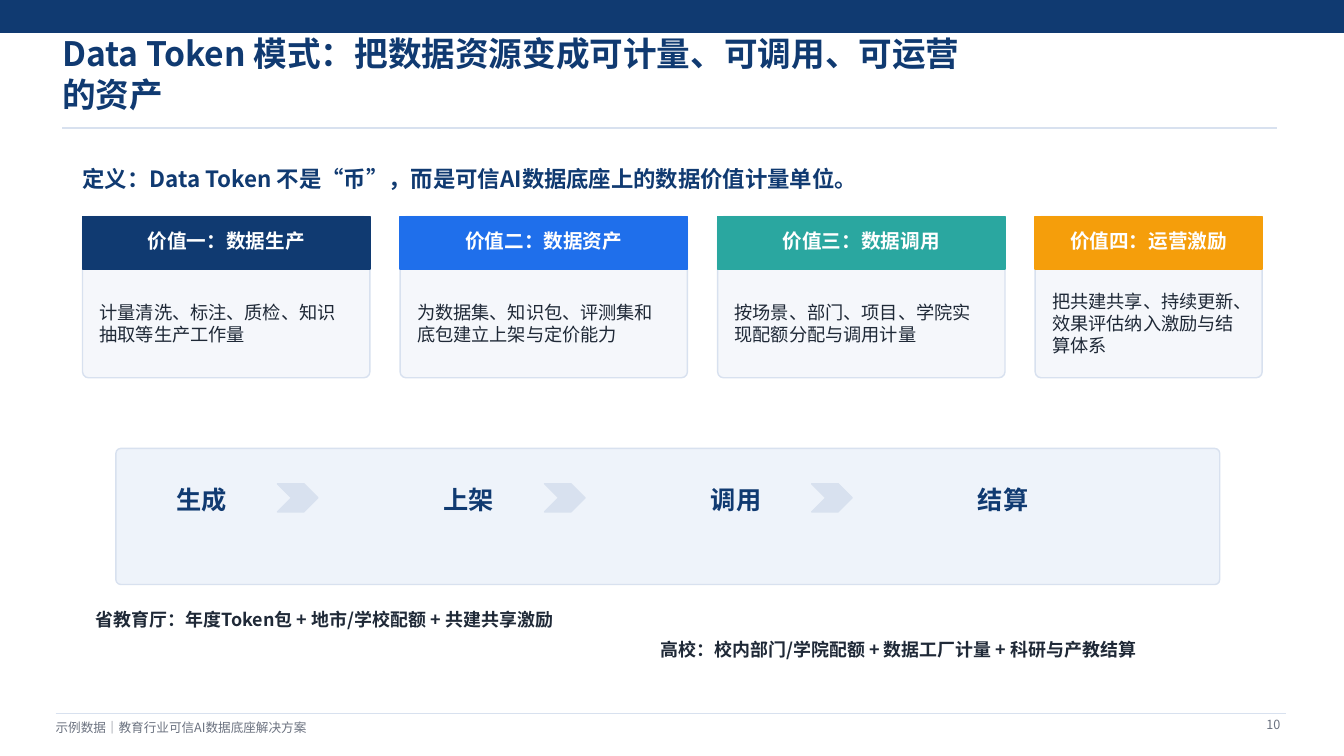
import lxml.etree
import pptx
import pptx.dml.color
import pptx.enum.shapes
import pptx.enum.text
import pptx.oxml.ns
import pptx.util

Cm = pptx.util.Cm
Pt = pptx.util.Pt
RGBColor = pptx.dml.color.RGBColor
SHAPE = pptx.enum.shapes.MSO_SHAPE
ALIGN = pptx.enum.text.PP_ALIGN
qn = pptx.oxml.ns.qn

FONT = "Noto Sans CJK SC"
NAVY = RGBColor(0x10, 0x3A, 0x71)
BLUE = RGBColor(0x1F, 0x6F, 0xEB)
TEAL = RGBColor(0x2A, 0xA7, 0xA0)
ORANGE = RGBColor(0xF5, 0x9E, 0x0B)
WHITE = RGBColor(0xFF, 0xFF, 0xFF)
INK = RGBColor(0x1F, 0x29, 0x37)
GRAY = RGBColor(0x6B, 0x72, 0x80)
RULE = RGBColor(0xD8, 0xE1, 0xEF)
CARD_FILL = RGBColor(0xF5, 0xF7, 0xFB)
FLOW_FILL = RGBColor(0xEE, 0xF3, 0xFA)

SLIDE_WIDTH, SLIDE_HEIGHT = 33.86, 19.05
CARD_WIDTH, LAST_CARD_WIDTH, CARD_PITCH = 7.24, 5.72, 8
STEP_PITCH = 6.73

CARDS = [
    ("价值一：数据生产", "计量清洗、标注、质检、知识抽取等生产工作量", NAVY),
    ("价值二：数据资产", "为数据集、知识包、评测集和底包建立上架与定价能力", BLUE),
    ("价值三：数据调用", "按场景、部门、项目、学院实现配额分配与调用计量", TEAL),
    ("价值四：运营激励", "把共建共享、持续更新、效果评估纳入激励与结算体系", ORANGE),
]
STEPS = ["生成", "上架", "调用", "结算"]


def write_text(shape, text, size, color, bold=False, align=ALIGN.LEFT):
    frame = shape.text_frame
    frame.word_wrap = True
    frame.auto_size = pptx.enum.text.MSO_AUTO_SIZE.NONE
    frame.vertical_anchor = pptx.enum.text.MSO_ANCHOR.MIDDLE
    frame.margin_left = frame.margin_right = 0
    frame.margin_top = frame.margin_bottom = 0
    frame.text = text
    paragraph = frame.paragraphs[0]
    paragraph.alignment = align
    font = paragraph.font
    font.name = FONT
    font.size = Pt(size)
    font.bold = bold
    font.color.rgb = color
    properties = paragraph._p.pPr.find(qn("a:defRPr"))
    lxml.etree.SubElement(properties, qn("a:ea")).set("typeface", FONT)


def add_text(slide, box, text, size, color, bold=False, align=ALIGN.LEFT):
    shape = slide.shapes.add_textbox(*map(Cm, box))
    write_text(shape, text, size, color, bold, align)


def add_block(slide, kind, box, fill, line):
    shape = slide.shapes.add_shape(kind, *map(Cm, box))
    shape.shadow.inherit = False
    shape.fill.solid()
    shape.fill.fore_color.rgb = fill
    shape.line.color.rgb = line
    shape.line.width = Pt(1)
    if kind == SHAPE.ROUNDED_RECTANGLE:
        shape.adjustments[0] = 0.037


def add_rule(slide, left, right, top):
    connector = slide.shapes.add_connector(
        pptx.enum.shapes.MSO_CONNECTOR.STRAIGHT, Cm(left), Cm(top), Cm(right), Cm(top))
    connector.line.color.rgb = RULE
    connector.line.width = Pt(1)
    lxml.etree.SubElement(connector._element.spPr, qn("a:effectLst"))


def add_header(slide, left, top, width, height):
    add_block(slide, SHAPE.RECTANGLE, (0, 0, SLIDE_WIDTH, 0.81), NAVY, NAVY)
    title = slide.shapes.title
    title.left, title.top, title.width, title.height = map(Cm, (left, top, 22.61, 1.07))
    write_text(title, "Data Token 模式：把数据资源变成可计量、可调用、可运营的资产", 24, NAVY, True)
    add_rule(slide, left, left + width, top + height)


def add_footer(slide, left, top, width):
    add_rule(slide, left, left + width, top)
    add_text(slide, (left, top + 0.13, 12.19, 0.46),
             "示例数据｜教育行业可信AI数据底座解决方案", 9, GRAY)
    add_text(slide, (left + width - 1.4, top + 0.05, 1.27, 0.46),
             "10", 9, GRAY, align=ALIGN.RIGHT)


def add_card(slide, left, top, width, height, heading, body, color):
    add_block(slide, SHAPE.ROUNDED_RECTANGLE, (left, top, width, height), CARD_FILL, RULE)
    add_block(slide, SHAPE.RECTANGLE, (left, top, width, 1.32), color, color)
    add_text(slide, (left + 0.38, top + 0.25, width - 0.76, 0.71),
             heading, 14, WHITE, True, ALIGN.CENTER)
    add_text(slide, (left + 0.43, top + 1.65, width - 0.86, 2.08), body, 13, INK)


def add_cards(slide, left, top, height):
    for index, card in enumerate(CARDS):
        width = LAST_CARD_WIDTH if card == CARDS[-1] else CARD_WIDTH
        add_card(slide, left + index * CARD_PITCH, top, width, height, *card)


def add_flow(slide, left, top, width, height):
    add_block(slide, SHAPE.ROUNDED_RECTANGLE, (left, top, width, height), FLOW_FILL, RULE)
    for index, step in enumerate(STEPS):
        step_left = left + 1.02 + index * STEP_PITCH
        add_text(slide, (step_left, top + 1.04, 2.29, 0.51),
                 step, 18, NAVY, True, ALIGN.CENTER)
        if index < len(STEPS) - 1:
            add_block(slide, SHAPE.CHEVRON, (step_left + 3.05, top + 0.89, 1.02, 0.71),
                      RULE, RULE)


def add_examples(slide, left, top):
    add_text(slide, (left, top, 13.84, 0.64),
             "省教育厅：年度Token包 + 地市/学校配额 + 共建共享激励", 12.8, INK, True)
    add_text(slide, (left + 14.23, top + 0.76, 13.34, 0.64),
             "高校：校内部门/学院配额 + 数据工厂计量 + 科研与产教结算", 12.8, INK, True)


def main():
    presentation = pptx.Presentation()
    presentation.slide_width = Cm(SLIDE_WIDTH)
    presentation.slide_height = Cm(SLIDE_HEIGHT)
    slide = presentation.slides.add_slide(presentation.slide_layouts[5])
    add_header(slide, 1.57, 1.32, 30.61, 1.91)
    add_text(slide, (2.08, 4.11, 29.97, 0.76),
             "定义：Data Token 不是“币”，而是可信AI数据底座上的数据价值计量单位。", 16, NAVY, True)
    add_cards(slide, 2.08, 5.46, 4.06)
    add_flow(slide, 2.92, 11.3, 27.81, 3.43)
    add_examples(slide, 2.41, 15.29)
    add_footer(slide, 1.4, 17.98, 30.99)
    presentation.save("out.pptx")


if __name__ == "__main__":
    main()
